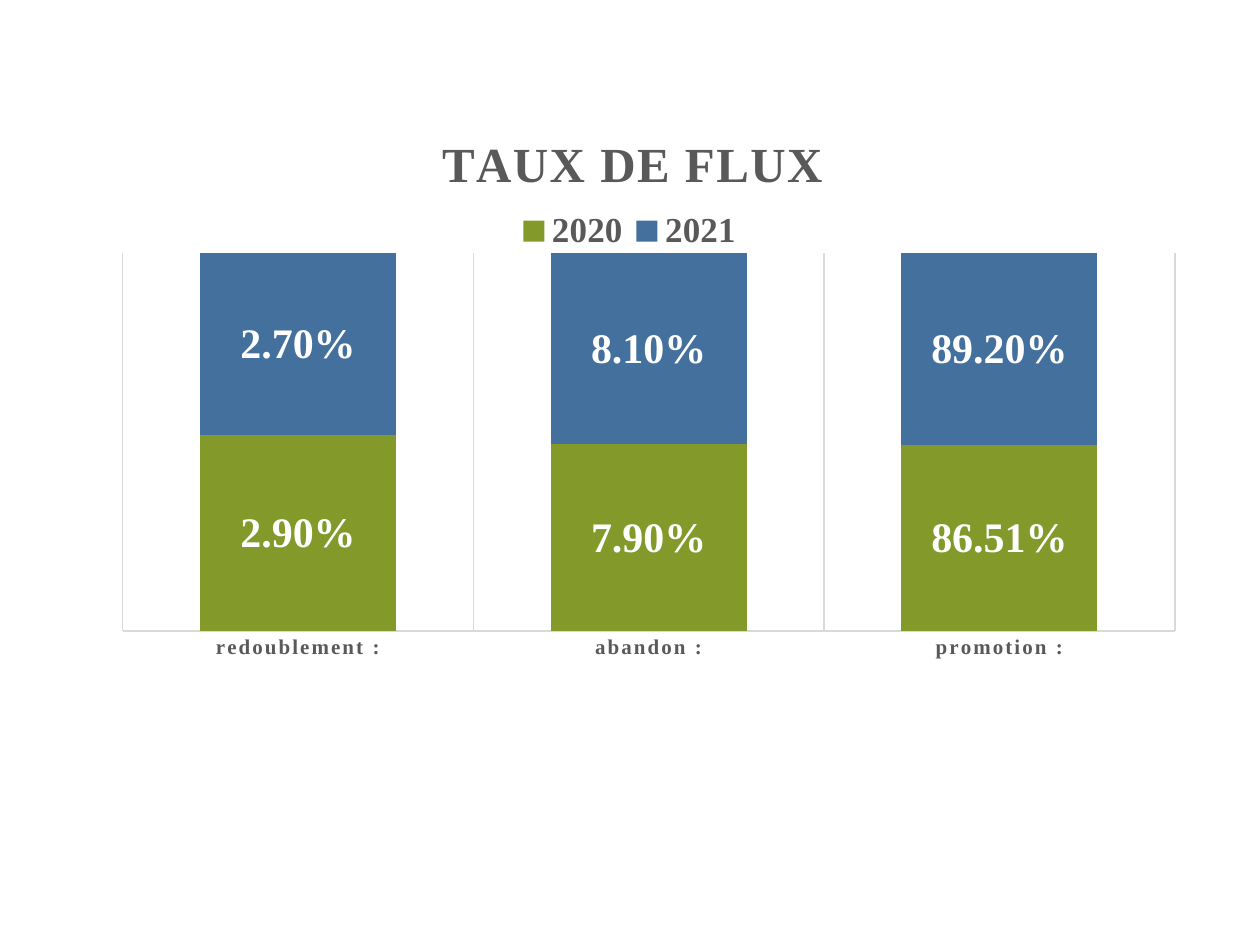
from pptx import Presentation
from pptx.chart.data import CategoryChartData
from pptx.dml.color import RGBColor
from pptx.enum.chart import XL_CHART_TYPE, XL_LEGEND_POSITION, XL_TICK_MARK
from pptx.oxml import parse_xml
from pptx.oxml.ns import nsdecls, qn
from pptx.util import Pt

STACKED = XL_CHART_TYPE.COLUMN_STACKED_100
LEGEND_TOP = XL_LEGEND_POSITION.TOP
NO_TICK = XL_TICK_MARK.NONE

GREEN = RGBColor(0x83, 0x99, 0x2A)
BLUE = RGBColor(0x44, 0x70, 0x9D)
GREY = RGBColor(0x59, 0x59, 0x59)
LIGHT_GREY = RGBColor(0xD9, 0xD9, 0xD9)
WHITE = RGBColor(0xFF, 0xFF, 0xFF)
FONT = "Times New Roman"
PERCENT = "0.00%"

CATEGORIES = ("redoublement :", "abandon :", "promotion :")
SERIES = (
    ("2020", (0.029, 0.079, 0.8651), GREEN),
    ("2021", (0.027, 0.081, 0.892), BLUE),
)


def format_font(font, size, color=GREY):
    font.name = FONT
    font.size = Pt(size)
    font.bold = True
    font.color.rgb = color


def add_title(chart, text, size, color=GREY):
    frame = chart.chart_title.text_frame
    frame.text = text
    format_font(frame.paragraphs[0].runs[0].font, size, color)
    chart.chart_title.include_in_layout = False


def set_layout(element, index, target=None, **fractions):
    """Place a chart part by fractions of the chart; index is the layout's place in the XML."""
    for old in element.findall(qn("c:layout")):
        element.remove(old)
    parts = f'<c:layoutTarget val="{target}"/>' if target else ""
    parts += '<c:xMode val="edge"/><c:yMode val="edge"/>'
    parts += "".join(f'<c:{key} val="{value}"/>' for key, value in fractions.items())
    element.insert(index, parse_xml(
        f'<c:layout {nsdecls("c")}><c:manualLayout>{parts}</c:manualLayout></c:layout>'))


def set_letter_spacing(chart, query, hundredths):
    for properties in chart.element.xpath(query):
        properties.set("spc", str(hundredths))


def format_axes(chart):
    axis = chart.category_axis
    axis.major_tick_mark = axis.minor_tick_mark = NO_TICK
    axis.has_major_gridlines = True
    format_font(axis.tick_labels.font, 12)
    for line in (axis.format.line, axis.major_gridlines.format.line):
        line.color.rgb = LIGHT_GREY
        line.width = Pt(0.75)
    values = chart.value_axis
    values.has_major_gridlines = False
    values.tick_labels.number_format = PERCENT
    values.tick_labels.number_format_is_linked = False
    values.visible = False


def format_series(series, color):
    series.format.fill.solid()
    series.format.fill.fore_color.rgb = color
    labels = series.data_labels
    labels.show_value = True
    labels.number_format = PERCENT
    labels.number_format_is_linked = False
    format_font(labels.font, 24, WHITE)


def add_flow_chart(page):
    data = CategoryChartData(number_format=PERCENT)
    data.categories = CATEGORIES
    for name, values, _ in SERIES:
        data.add_series(name, values)
    chart = page.shapes.add_chart(
        STACKED, Pt(48.24), Pt(54.72), Pt(623.52), Pt(329.04), data).chart
    chart.font.name = FONT
    chart.font.size = Pt(10)

    add_title(chart, "TAUX DE FLUX", 28)
    chart.has_legend = True
    chart.legend.position = LEGEND_TOP
    chart.legend.include_in_layout = False
    format_font(chart.legend.font, 20)
    format_axes(chart)

    plot = chart.plots[0]
    plot.vary_by_categories = False
    plot.gap_width = 79
    plot.overlap = 100
    for series, (_, _, color) in zip(plot.series, SERIES):
        format_series(series, color)

    set_letter_spacing(chart, ".//c:title//a:rPr", 100)
    set_letter_spacing(chart, ".//c:catAx/c:txPr//a:defRPr", 120)
    plot_area = chart.element.xpath(".//c:plotArea")[0]
    set_layout(plot_area, 0, target="inner", x=0.035, y=0.273, w=0.965, h=0.657)
    set_layout(chart.chart_title.element if hasattr(chart.chart_title, "element")
               else chart.element.xpath("./c:chart/c:title")[0], 1, x=0.32, y=0.05)
    set_layout(chart.element.xpath(".//c:legend")[0], 1, x=0.39, y=0.19, w=0.22, h=0.09)


def main():
    deck = Presentation()
    deck.slide_width = Pt(720)
    deck.slide_height = Pt(540)
    page = deck.slides.add_slide(deck.slide_layouts[6])
    add_flow_chart(page)
    deck.save("out.pptx")


if __name__ == "__main__":
    main()
